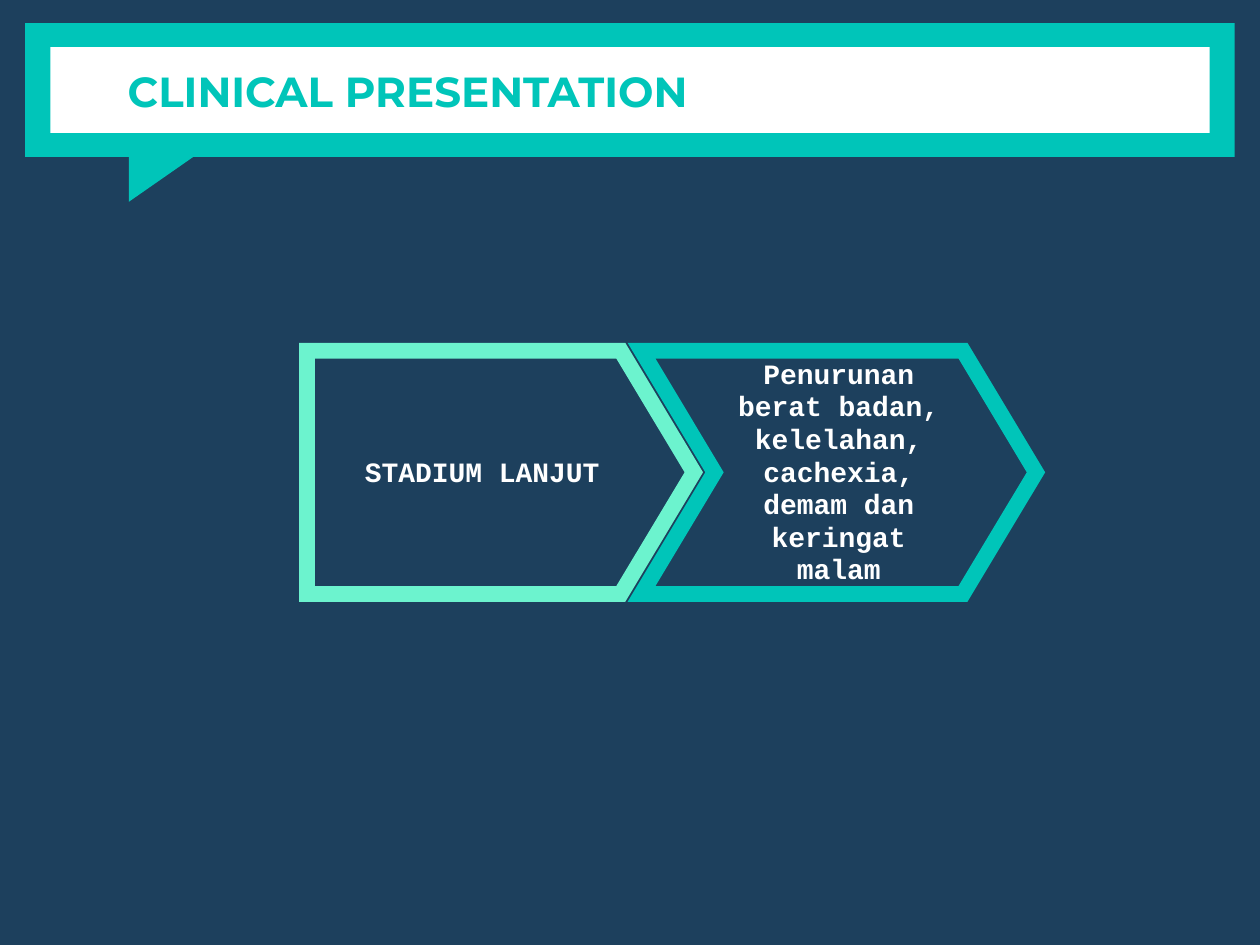
import pptx
import pptx.util
import pptx.dml.color
import pptx.enum.shapes
import pptx.enum.text
import lxml.etree
from dataclasses import dataclass

Pt = pptx.util.Pt
SHAPE = pptx.enum.shapes.MSO_SHAPE
ALIGN = pptx.enum.text.PP_ALIGN
MIDDLE = pptx.enum.text.MSO_ANCHOR.MIDDLE


def rgb(code):
    return pptx.dml.color.RGBColor.from_string(code)


@dataclass(frozen=True)
class Theme:
    navy = rgb("1D405D")
    teal = rgb("00C5B9")
    mint = rgb("6CF3CE")
    white = rgb("FFFFFF")
    title_font = "Montserrat"
    body_font = "Courier New"
    title_size = Pt(24)
    body_size = Pt(16)
    body_spacing = 0.97
    outline = Pt(9)
    inset = Pt(7.2)


THEME = Theme()


def add_plain_shape(slide, kind, left, top, width, height, fill=None):
    """Add a preset shape without line or shadow, filled only if a colour is given."""
    shape = slide.shapes.add_shape(kind, Pt(left), Pt(top), Pt(width), Pt(height))
    shape.shadow.inherit = False
    shape.line.fill.background()
    if fill is None:
        shape.fill.background()
    else:
        shape.fill.solid()
        shape.fill.fore_color.rgb = fill
    return shape


def write_text(shape, text, font, size, color, align):
    frame = shape.text_frame
    frame.word_wrap = True
    frame.auto_size = pptx.enum.text.MSO_AUTO_SIZE.NONE
    frame.vertical_anchor = MIDDLE
    frame.margin_left = frame.margin_right = THEME.inset
    frame.margin_top = frame.margin_bottom = THEME.inset
    frame.text = text
    paragraph = frame.paragraphs[0]
    paragraph.alignment = align
    paragraph.font.name = font
    paragraph.font.size = size
    paragraph.font.bold = True
    paragraph.font.color.rgb = color
    return paragraph


def add_banner(slide, text, left, top, width, height):
    """Speech-bubble header: teal frame, tail, white panel and the slide title."""
    border_x, border_y = 14.4, 13.7
    tail_width, tail_height = 49.7, 34.6
    tail_left, tail_top = left + 59.2, top + 67.5
    add_plain_shape(slide, SHAPE.RECTANGLE, left, top, width, height, THEME.teal)
    # The tail turns a quarter about its centre, so its sides are swapped.
    shift = (tail_width - tail_height) / 2
    tail = add_plain_shape(slide, SHAPE.RIGHT_TRIANGLE, tail_left + shift,
                           tail_top - shift, tail_height, tail_width, THEME.teal)
    tail.rotation = 90
    add_plain_shape(slide, SHAPE.RECTANGLE, left + border_x, top + border_y,
                    width - 2 * border_x, height - 2 * border_y, THEME.white)

    title = slide.shapes.title
    indent = 51.3
    title.left, title.top = Pt(left + indent), Pt(top + 0.4)
    title.width, title.height = Pt(width - indent - border_x), Pt(height)
    write_text(title, text, THEME.title_font, THEME.title_size, THEME.teal, ALIGN.LEFT)
    slide.shapes._spTree.append(title._element)  # bring in front of the panel


def add_stage(slide, kind, point, color, text, left, top, width, height):
    """Outlined arrow block; point is the tip depth relative to the height."""
    stage = add_plain_shape(slide, kind, left, top, width, height)
    stage.adjustments[0] = point
    stage.line.color.rgb = color
    stage.line.width = THEME.outline
    miter = lxml.etree.SubElement(stage.line._get_or_add_ln(),
                                  pptx.oxml.ns.qn("a:miter"))
    miter.set("lim", "800000")
    paragraph = write_text(stage, text, THEME.body_font, THEME.body_size,
                           THEME.white, ALIGN.CENTER)
    paragraph.line_spacing = THEME.body_spacing


def add_stage_flow(slide, left, top, width, height):
    first_width, second_width = 221, 225.4
    add_stage(slide, SHAPE.PENTAGON, 0.3, THEME.mint, "STADIUM LANJUT",
              left, top, first_width, height)
    add_stage(slide, SHAPE.CHEVRON, 0.3, THEME.teal,
              "Penurunan berat badan, kelelahan, cachexia, demam dan keringat malam",
              left + width - second_width, top, second_width, height)


def main():
    deck = pptx.Presentation()
    deck.slide_width, deck.slide_height = Pt(720), Pt(540)
    slide = deck.slides.add_slide(deck.slide_layouts[5])
    slide.background.fill.solid()
    slide.background.fill.fore_color.rgb = THEME.navy
    add_banner(slide, "CLINICAL PRESENTATION", 14.4, 13.2, 691.2, 76.4)
    add_stage_flow(slide, 175.5, 200.4, 416.5, 139)
    deck.save("out.pptx")


if __name__ == "__main__":
    main()
